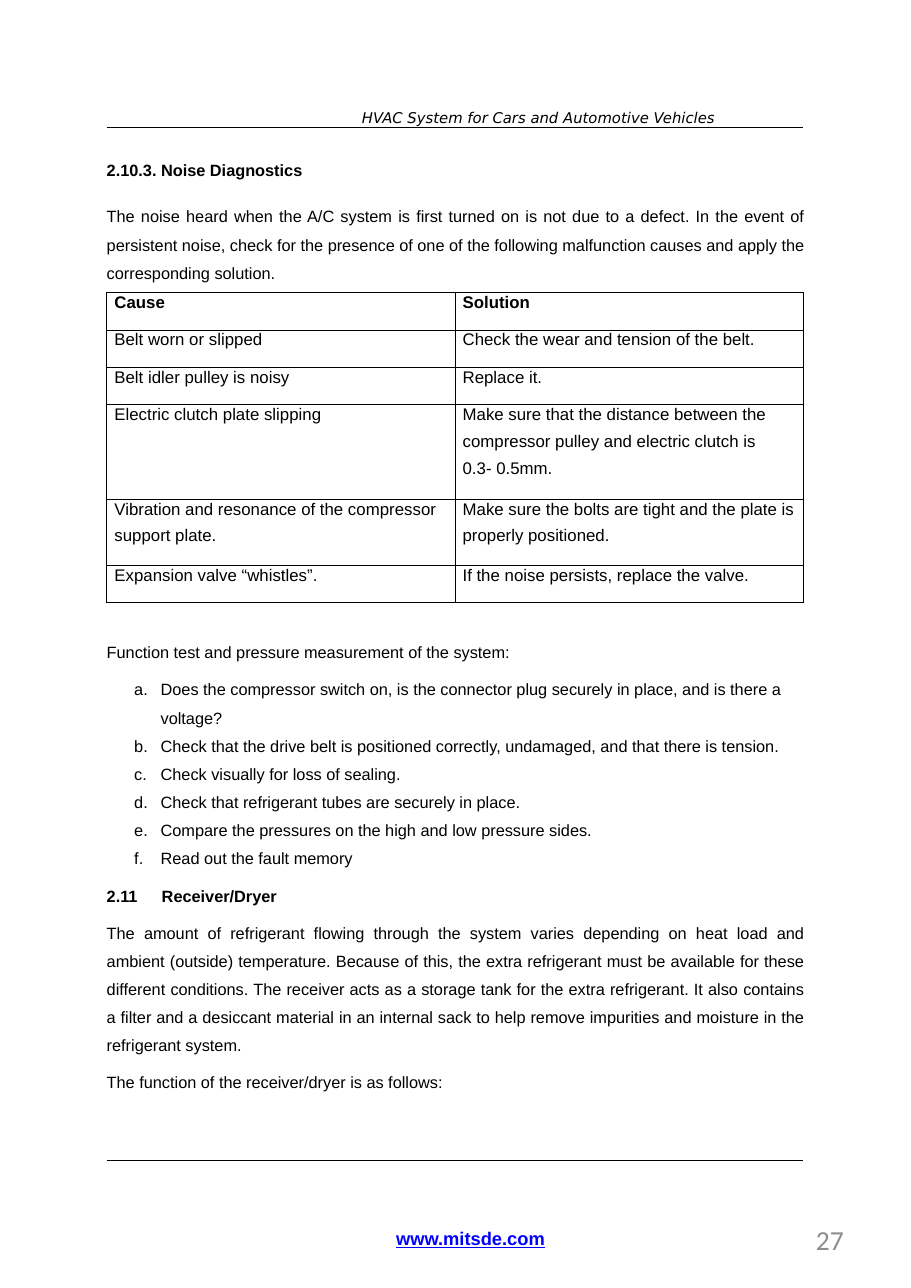
from lxml import etree
from pptx import Presentation
from pptx.dml.color import RGBColor
from pptx.enum.shapes import MSO_CONNECTOR
from pptx.enum.text import MSO_ANCHOR, MSO_AUTO_SIZE, PP_ALIGN
from pptx.oxml.ns import qn
from pptx.util import Inches, Pt

LEFT_ALIGN, RIGHT_ALIGN, JUSTIFY = PP_ALIGN.LEFT, PP_ALIGN.RIGHT, PP_ALIGN.JUSTIFY
TOP = MSO_ANCHOR.TOP
STRAIGHT = MSO_CONNECTOR.STRAIGHT

COLORS = {"ink": "000000", "link": "0000FF", "page": "8C8C8C"}
HEADER = "HVAC System for Cars and Automotive Vehicles"
HEADING = "2.10.3. Noise Diagnostics"
INTRO = ("The noise heard when the A/C system is first turned on is not due to a defect. "
         "In the event of persistent noise, check for the presence of one of the following "
         "malfunction causes and apply the corresponding solution.")
FAULTS = [
    (["Cause"], ["Solution"]),
    (["Belt worn or slipped"], ["Check the wear and tension of the belt."]),
    (["Belt idler pulley is noisy"], ["Replace it."]),
    (["Electric clutch plate slipping"],
     ["Make sure that the distance between the",
      "compressor pulley and electric clutch is", "0.3- 0.5mm."]),
    (["Vibration and resonance of the compressor", "support plate."],
     ["Make sure the bolts are tight and the plate is", "properly positioned."]),
    (["Expansion valve “whistles”."], ["If the noise persists, replace the valve."]),
]
BODY = [
    ("lead", "Function test and pressure measurement of the system:", 0),
    ("item", "Does the compressor switch on, is the connector plug securely in place, "
             "and is there a voltage?", 5.9),
    ("item", "Check that the drive belt is positioned correctly, undamaged, "
             "and that there is tension.", 5.6),
    ("item", "Check visually for loss of sealing.", 5.6),
    ("item", "Check that refrigerant tubes are securely in place.", 5.6),
    ("item", "Compare the pressures on the high and low pressure sides.", 5.6),
    ("item", "Read out the fault memory", 5.6),
    ("head", "2.11\tReceiver/Dryer", 11.6),
    ("text", "The amount of refrigerant flowing through the system varies depending on heat "
             "load and ambient (outside) temperature. Because of this, the extra refrigerant "
             "must be available for these different conditions. The receiver acts as a storage "
             "tank for the extra refrigerant. It also contains a filter and a desiccant material "
             "in an internal sack to help remove impurities and moisture in the refrigerant "
             "system.", 5.8),
    ("lead", "The function of the receiver/dryer is as follows:", 11.5),
]
SITE = "www.mitsde.com"
PAGE = "27"

SLIDE_W, SLIDE_H = 8.28, 11.71
LEFT, TEXT_W, RULE_W = 0.97, 6.35, 6.33
TEXT_SIZE, CELL_SIZE = 10.7, 11
LINE, WIDE = 0.34, 1.44
CELL_LINE, CELL_GAP = 12.6, 5
ROW_STEP = 0.26


def add_run(p, text, size, font="Arial", color="ink", **style):
    r = p.add_run()
    r.text = text
    r.font.size = Pt(size)
    r.font.name = font
    r.font.color.rgb = RGBColor.from_string(COLORS[color])
    for name, value in style.items():
        setattr(r.font, name, value)


def frame(sp, x, y, w, h):
    sp.left, sp.top, sp.width, sp.height = map(Inches, (x, y, w, h))
    tf = sp.text_frame
    tf.word_wrap = True
    tf.auto_size = MSO_AUTO_SIZE.NONE
    tf.vertical_anchor = TOP
    tf.margin_left = tf.margin_right = tf.margin_top = tf.margin_bottom = 0
    return tf


def add_text(s, box, text, size, align=LEFT_ALIGN, spacing=1.0, **style):
    tf = frame(s.shapes.add_textbox(0, 0, 0, 0), *box)
    p = tf.paragraphs[0]
    p.alignment = align
    p.line_spacing = spacing
    add_run(p, text, size, **style)


def add_rule(s, y):
    line = s.shapes.add_connector(STRAIGHT, Inches(LEFT), Inches(y),
                                  Inches(LEFT + RULE_W), Inches(y))
    line.line.color.rgb = RGBColor.from_string(COLORS["ink"])
    line.line.width = Pt(0.5)
    etree.SubElement(line._element.spPr, qn("a:effectLst"))


def set_borders(cell):
    tcPr = cell._tc.get_or_add_tcPr()
    for i, side in enumerate(("a:lnL", "a:lnR", "a:lnT", "a:lnB")):
        ln = etree.Element(qn(side), w=str(Pt(0.5)))
        fill = etree.SubElement(ln, qn("a:solidFill"))
        etree.SubElement(fill, qn("a:srgbClr"), val=COLORS["ink"])
        tcPr.insert(i, ln)


def fill_cell(cell, lines, bold):
    cell.fill.background()
    set_borders(cell)
    cell.vertical_anchor = TOP
    cell.margin_left = Inches(0.07)
    cell.margin_right = cell.margin_top = cell.margin_bottom = 0
    tf = cell.text_frame
    for i, text in enumerate(lines):
        p = tf.add_paragraph() if i else tf.paragraphs[0]
        p.line_spacing = Pt(CELL_LINE)
        p.space_before = Pt(CELL_GAP if i else 0)
        add_run(p, text, CELL_SIZE, bold=bold)


def add_faults(s):
    heights = [LINE + ROW_STEP * (max(map(len, row)) - 1) for row in FAULTS]
    table = s.shapes.add_table(len(FAULTS), 2, Inches(LEFT), Inches(2.66),
                               Inches(RULE_W), Inches(sum(heights))).table
    table.first_row = table.horz_banding = False
    for col in table.columns:
        col.width = Inches(RULE_W / 2)
    for i, row in enumerate(FAULTS):
        table.rows[i].height = Inches(heights[i])
        for j, lines in enumerate(row):
            fill_cell(table.cell(i, j), lines, i == 0)


def fill_body(tf):
    for i, (kind, text, before) in enumerate(BODY):
        p = tf.add_paragraph() if i else tf.paragraphs[0]
        item = kind == "item"
        p.alignment = JUSTIFY if kind == "text" else LEFT_ALIGN
        p.line_spacing = WIDE if kind == "text" or i == 1 else 1.0
        p.space_before = Pt(before)
        pPr = p._p.get_or_add_pPr()
        pPr.set("marL", str(Inches(0.49 if item else 0)))
        pPr.set("indent", str(Inches(-0.24 if item else 0)))
        if item:
            etree.SubElement(pPr, qn("a:buFont"), typeface="Arial")
            etree.SubElement(pPr, qn("a:buAutoNum"), type="alphaLcPeriod")
        else:
            etree.SubElement(pPr, qn("a:buNone"))
        if kind == "head":
            tabs = etree.SubElement(pPr, qn("a:tabLst"))
            etree.SubElement(tabs, qn("a:tab"), pos=str(Inches(0.47)), algn="l")
        add_run(p, text, TEXT_SIZE, bold=kind == "head")


def main():
    prs = Presentation()
    prs.slide_width, prs.slide_height = Inches(SLIDE_W), Inches(SLIDE_H)
    s = prs.slides.add_slide(prs.slide_layouts[1])
    title, body = s.placeholders[0], s.placeholders[1]

    add_text(s, (3.29, 0.99, 4.03, 0.17), HEADER, 9.7, font="DejaVu Sans", italic=True)
    add_rule(s, 1.16)
    p = frame(title, LEFT, 1.46, TEXT_W, 0.2).paragraphs[0]
    p.alignment = LEFT_ALIGN
    add_run(p, HEADING, TEXT_SIZE, bold=True)
    add_text(s, (LEFT, 1.8, TEXT_W, 0.72), INTRO, TEXT_SIZE, JUSTIFY, WIDE)
    add_faults(s)
    fill_body(frame(body, LEFT, 5.84, TEXT_W, 4.16))
    add_rule(s, 10.55)
    add_text(s, (3.6, 11.16, 1.4, 0.2), SITE, 12, color="link", bold=True, underline=True)
    add_text(s, (5.81, 11.12, 1.86, 0.3), PAGE, 18, RIGHT_ALIGN, font="Calibri", color="page")
    prs.save("out.pptx")


if __name__ == "__main__":
    main()
